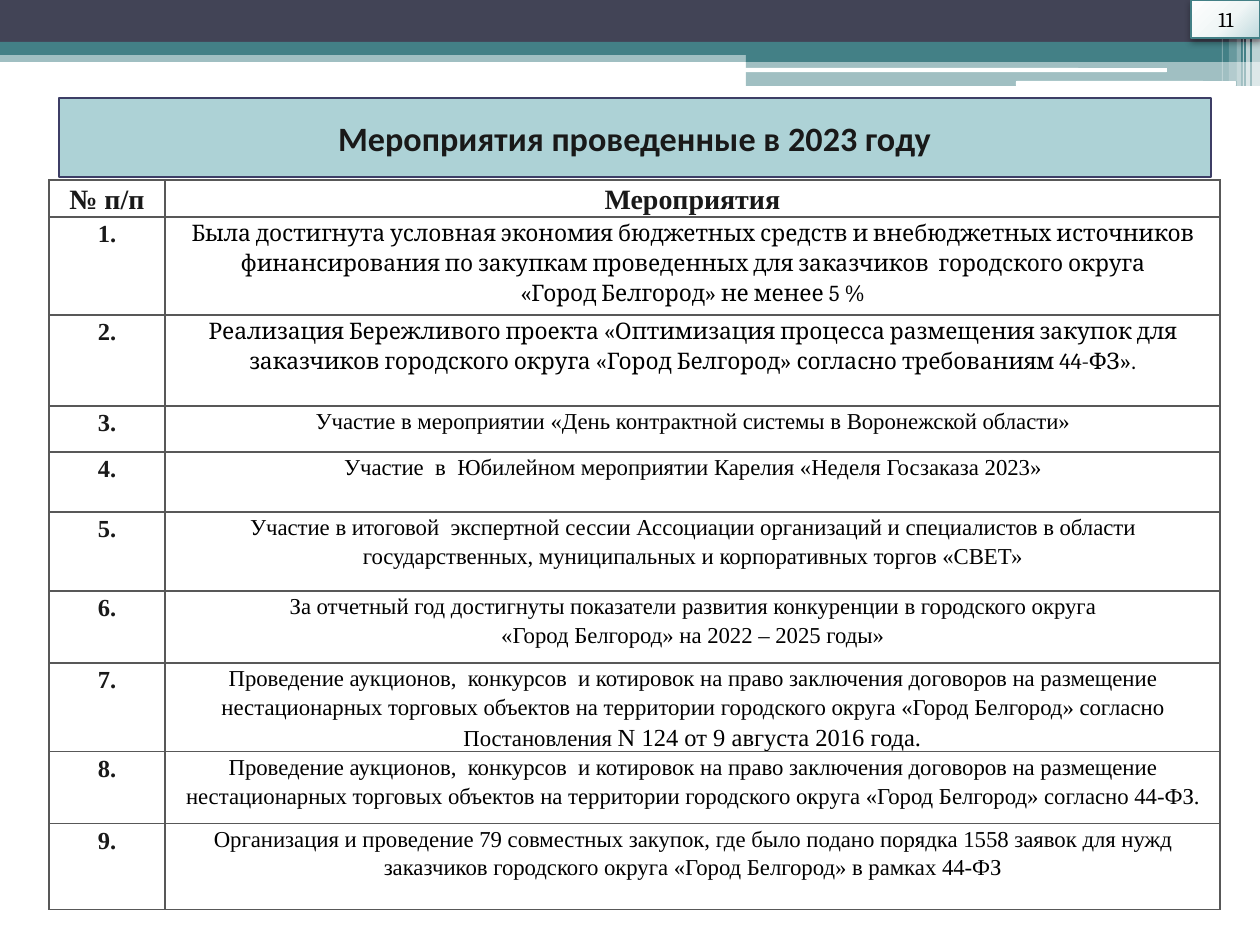
import pptx
import pptx.util
import pptx.oxml
import pptx.oxml.ns
import pptx.dml.color
import pptx.enum.shapes
import pptx.enum.text

RGBColor = pptx.dml.color.RGBColor
SHAPE = pptx.enum.shapes.MSO_SHAPE
CENTER = pptx.enum.text.PP_ALIGN.CENTER
TEAL = RGBColor(0x43, 0x80, 0x86)
NAVY = RGBColor(0x42, 0x44, 0x56)
WHITE = RGBColor(0xFF, 0xFF, 0xFF)
BLACK = RGBColor(0, 0, 0)
INK = RGBColor(0x19, 0x19, 0x19)
TITLE_FILL = RGBColor(0xAD, 0xD2, 0xD6)
TITLE_LINE = RGBColor(0x3D, 0x3E, 0x66)
SERIF = "Times New Roman"
NS = pptx.oxml.ns.nsdecls("a")
PX = 914400 / 126


def px(*lengths):
    return [pptx.util.Emu(round(n * PX)) for n in lengths]


def style(p, font, size, color, bold=False):
    p.font.name, p.font.size = font, pptx.util.Pt(size)
    p.font.color.rgb, p.font.bold = color, bold


prs = pptx.Presentation()
prs.slide_width, prs.slide_height = px(1260, 945)
s = prs.slides.add_slide(prs.slide_layouts[5])

# Header bands, white bars and stripes: x, y, width, height, colour, opacity %
bands = [
    (0, 50, 1260, 12, TEAL, 50),
    (0, 0, 1260, 42, NAVY, 100),
    (0, 42, 1260, 13, TEAL, 100),
    (746, 49, 514, 13, TEAL, 100),
    (746, 61, 514, 25, TEAL, 50),
    (745, 68, 422, 4, WHITE, 100),
    (1016, 81, 220, 5, WHITE, 100),
    (1252, 0, 8, 86, WHITE, 65),
    (1246, 0, 4, 86, WHITE, 65),
    (1243, 0, 1, 86, WHITE, 60),
    (1237, 0, 4, 86, WHITE, 40),
    (1229, 0, 8, 81, WHITE, 20),
    (1222, 0, 1, 81, WHITE, 30),
]
for x, y, w, h, color, opacity in bands:
    rounded = color == WHITE and w > h
    kind = SHAPE.ROUNDED_RECTANGLE if rounded else SHAPE.RECTANGLE
    sp = s.shapes.add_shape(kind, *px(x, y, w, h))
    sp.shadow.inherit = False
    sp.fill.solid()
    sp.fill.fore_color.rgb = color
    sp.line.fill.background()
    if opacity < 100:
        clr = sp._element.spPr.find(".//" + pptx.oxml.ns.qn("a:srgbClr"))
        clr.append(pptx.oxml.parse_xml(f'<a:alpha {NS} val="{opacity * 1000}"/>'))

# Table of activities: row height, paragraphs, font
rows = [
    (98, ["Была достигнута условная экономия бюджетных средств и внебюджетных источников "
          "финансирования по закупкам проведенных для заказчиков  городского округа",
          "«Город Белгород» не менее 5 %"], "Cambria"),
    (91, ["Реализация Бережливого проекта «Оптимизация процесса размещения закупок для "
          "заказчиков городского округа «Город Белгород» согласно требованиям 44-ФЗ»."], "Cambria"),
    (46, ["Участие в мероприятии «День контрактной системы в Воронежской области»"], SERIF),
    (60, ["Участие  в  Юбилейном мероприятии Карелия «Неделя Госзаказа 2023»"], SERIF),
    (79, ["Участие в итоговой  экспертной сессии Ассоциации организаций и специалистов в области "
          "государственных, муниципальных и корпоративных торгов «СВЕТ»"], SERIF),
    (72, ["За отчетный год достигнуты показатели развития конкуренции в городского округа",
          "«Город Белгород» на 2022 – 2025 годы»"], SERIF),
    (88, ["Проведение аукционов,  конкурсов  и котировок на право заключения договоров на размещение "
          "нестационарных торговых объектов на территории городского округа «Город Белгород» согласно "
          "Постановления "], SERIF),
    (72, ["Проведение аукционов,  конкурсов  и котировок на право заключения договоров на размещение "
          "нестационарных торговых объектов на территории городского округа «Город Белгород» "
          "согласно 44-ФЗ."], SERIF),
    (86, ["Организация и проведение 79 совместных закупок, где было подано порядка 1558 заявок для нужд "
          "заказчиков городского округа «Город Белгород» в рамках 44-ФЗ"], SERIF),
]
heights = [37] + [row[0] for row in rows]
table = s.shapes.add_table(len(heights), 2, *px(49, 180, 1171, sum(heights))).table
table.first_row = table.horz_banding = False
table.columns[0].width, table.columns[1].width = px(116, 1055)
for row, height in zip(table.rows, heights):
    row.height = px(height)[0]

table.cell(0, 0).text = "№ п/п"
table.cell(0, 1).text = "Мероприятия"
for i, (height, lines, font) in enumerate(rows, 1):
    table.cell(i, 0).text = f"{i}."
    table.cell(i, 1).text = "\n".join(lines)
r = table.cell(7, 1).text_frame.paragraphs[0].add_run()
r.text = "N 124 от 9 августа 2016 года."
r.font.size = pptx.util.Pt(14)

for i in range(len(heights)):
    for j in range(2):
        cell = table.cell(i, j)
        side = 15 if (i, j) == (5, 1) else 9
        cell.margin_left, cell.margin_right, cell.margin_top, cell.margin_bottom = px(side, side, 0, 0)
        for p in cell.text_frame.paragraphs:
            p.alignment, p.line_spacing = CENTER, 1.15
            if i == 0:
                style(p, SERIF, 16, INK, True)
            elif j == 0:
                style(p, SERIF, 14, INK, True)
            else:
                style(p, rows[i - 1][2], 13, BLACK)
        tcPr = cell._tc.get_or_add_tcPr()
        for edge in ("lnL", "lnR", "lnT", "lnB"):
            tcPr.append(pptx.oxml.parse_xml(
                f'<a:{edge} {NS} w="12700"><a:solidFill><a:srgbClr val="585858"/></a:solidFill></a:{edge}>'))
        cell.fill.background()

# Title in a rounded frame
sp = s.shapes.title
sp.left, sp.top, sp.width, sp.height = px(59, 98, 1152, 79)
sp._element.spPr.append(pptx.oxml.parse_xml(f'<a:prstGeom {NS} prst="roundRect"><a:avLst/></a:prstGeom>'))
sp.fill.solid()
sp.fill.fore_color.rgb = TITLE_FILL
sp.line.color.rgb = TITLE_LINE
sp.line.width = pptx.util.Pt(1.5)
tf = sp.text_frame
tf.text = "Мероприятия проведенные в 2023 году"
tf.vertical_anchor = pptx.enum.text.MSO_ANCHOR.MIDDLE
p = tf.paragraphs[0]
p.alignment = CENTER
style(p, "Calibri", 19.5, INK, True)

# Page number box with radial gradient and soft shadow
sp = s.shapes.add_shape(SHAPE.RECTANGLE, *px(1191, 0, 69, 38))
sp.line.color.rgb = TEAL
sp.line.width = pptx.util.Pt(0.75)
stops = "".join(f'<a:gs pos="{pos * 1000}"><a:srgbClr val="{c}"/></a:gs>'
                for pos, c in [(0, "FEFEFE"), (55, "F0F6F6"), (100, "BFD9DD")])
spPr = sp._element.spPr
spPr.find(pptx.oxml.ns.qn("a:prstGeom")).addnext(pptx.oxml.parse_xml(
    f'<a:gradFill {NS}><a:gsLst>{stops}</a:gsLst><a:path path="circle">'
    '<a:fillToRect l="-40000" t="-90000" r="140000" b="190000"/></a:path></a:gradFill>'))
spPr.append(pptx.oxml.parse_xml(
    f'<a:effectLst {NS}><a:outerShdw blurRad="52000" dist="25400" dir="5400000">'
    '<a:srgbClr val="000000"><a:alpha val="40000"/></a:srgbClr></a:outerShdw></a:effectLst>'))
tf = sp.text_frame
tf.text = "11"
tf.vertical_anchor = pptx.enum.text.MSO_ANCHOR.TOP
p = tf.paragraphs[0]
p.alignment = pptx.enum.text.PP_ALIGN.LEFT
p.space_before = pptx.util.Pt(3)
p._p.get_or_add_pPr().set("marL", str(px(15)[0]))
style(p, "Cambria", 12, BLACK)

prs.save("out.pptx")
